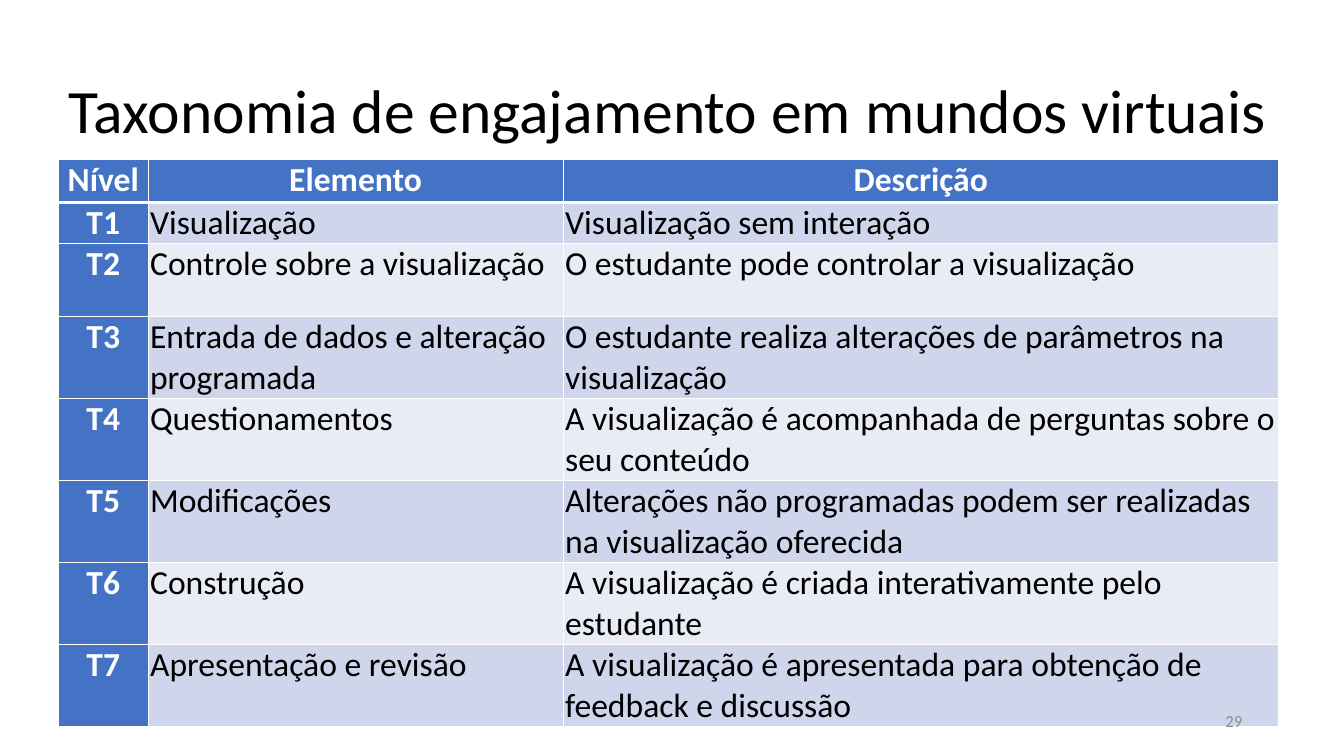
from lxml import etree
from pptx import Presentation
from pptx import util as u
from pptx.dml.color import RGBColor
from pptx.enum import text
from pptx.oxml import ns

FONT = "Calibri"
WHITE, BLACK, GREY = "FFFFFF", "000000", "8C8C8C"
BLUE = "4472C4"
BANDS = ["CFD5EA", "E9EBF5"]
COL_WIDTHS = [0.89, 4.12, 7.1]
ROW_HEIGHTS = [0.43, 0.36] + [0.72] * 6
HEADER = ("Nível", "Elemento", "Descrição")
LEVELS = [
    ("Visualização", "Visualização sem interação"),
    ("Controle sobre a visualização", "O estudante pode controlar a visualização"),
    ("Entrada de dados e alteração programada",
     "O estudante realiza alterações de parâmetros na visualização"),
    ("Questionamentos",
     "A visualização é acompanhada de perguntas sobre o seu conteúdo"),
    ("Modificações",
     "Alterações não programadas podem ser realizadas na visualização oferecida"),
    ("Construção", "A visualização é criada interativamente pelo estudante"),
    ("Apresentação e revisão",
     "A visualização é apresentada para obtenção de feedback e discussão"),
]


def rgb(color):
    return RGBColor.from_string(color)


def write(tf, words, size, color, align, bold=False):
    p = tf.paragraphs[0]
    p.alignment = align
    r = p.add_run()
    r.text = words
    r.font.name = FONT
    r.font.size = u.Pt(size)
    r.font.bold = bold
    r.font.color.rgb = rgb(color)
    return p


def add_borders(cell, top, bottom):
    """Draw white cell borders; widths in points, 1 at the sides."""
    tc_pr = cell._tc.get_or_add_tcPr()
    for side, width in (("L", 1), ("R", 1), ("T", top), ("B", bottom)):
        ln = etree.SubElement(tc_pr, ns.qn("a:ln" + side), w=str(u.Pt(width)))
        fill = etree.SubElement(ln, ns.qn("a:solidFill"))
        etree.SubElement(fill, ns.qn("a:srgbClr"), val=WHITE)


def add_title(s, x, y, w, h):
    sp = s.shapes.title
    sp.left, sp.top, sp.width, sp.height = map(u.Inches, (x, y, w, h))
    tf = sp.text_frame
    tf.word_wrap = True
    tf.auto_size = text.MSO_AUTO_SIZE.NONE
    tf.vertical_anchor = text.MSO_ANCHOR.MIDDLE
    p = write(tf, "Taxonomia de engajamento em mundos virtuais", 44, BLACK,
              text.PP_ALIGN.LEFT)
    p.line_spacing = 0.9


def fill_cell(cell, words, row, col):
    cell.margin_left = cell.margin_right = u.Inches(0.02)
    cell.margin_top = cell.margin_bottom = 0
    add_borders(cell, 3 if row == 1 else 1, 3 if row == 0 else 1)
    heading = row == 0 or col == 0
    cell.fill.solid()
    cell.fill.fore_color.rgb = rgb(BLUE if heading else BANDS[(row - 1) % 2])
    align = text.PP_ALIGN.CENTER if heading else text.PP_ALIGN.LEFT
    write(cell.text_frame, words, 24, WHITE if heading else BLACK, align, heading)


def add_taxonomy(s, x, y, w, h):
    rows = [HEADER] + [(f"T{n}", *level) for n, level in enumerate(LEVELS, 1)]
    table = s.shapes.add_table(len(rows), len(HEADER),
                               *map(u.Inches, (x, y, w, h))).table
    table.first_col = True
    for column, width in zip(table.columns, COL_WIDTHS):
        column.width = u.Inches(width * w / sum(COL_WIDTHS))
    for row, height in zip(table.rows, ROW_HEIGHTS):
        row.height = u.Inches(height)
    for i, row in enumerate(rows):
        for j, words in enumerate(row):
            fill_cell(table.cell(i, j), words, i, j)


def add_page_number(s, x, y, w, h):
    tf = s.shapes.add_textbox(*map(u.Inches, (x, y, w, h))).text_frame
    tf.word_wrap = True
    tf.vertical_anchor = text.MSO_ANCHOR.MIDDLE
    write(tf, "29", 12, GREY, text.PP_ALIGN.RIGHT)


def main():
    prs = Presentation()
    prs.slide_width, prs.slide_height = u.Inches(13.33), u.Inches(7.5)
    s = prs.slides.add_slide(prs.slide_layouts[5])
    add_title(s, 0.58, 0.4, 12.44, 1.45)
    add_taxonomy(s, 0.58, 1.58, 12.1, sum(ROW_HEIGHTS))
    add_page_number(s, 9.42, 6.95, 3, 0.4)
    prs.save("out.pptx")


if __name__ == "__main__":
    main()
